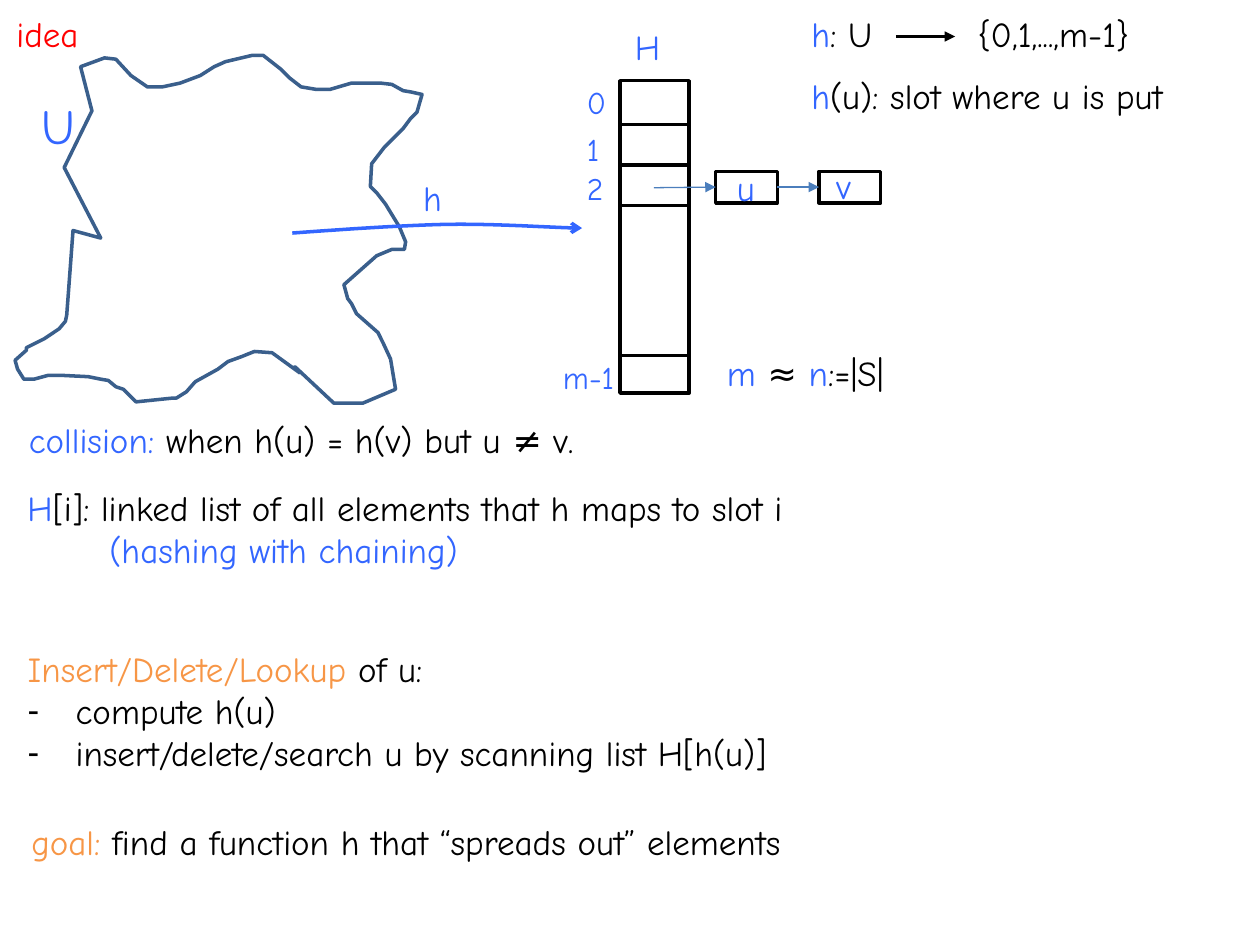
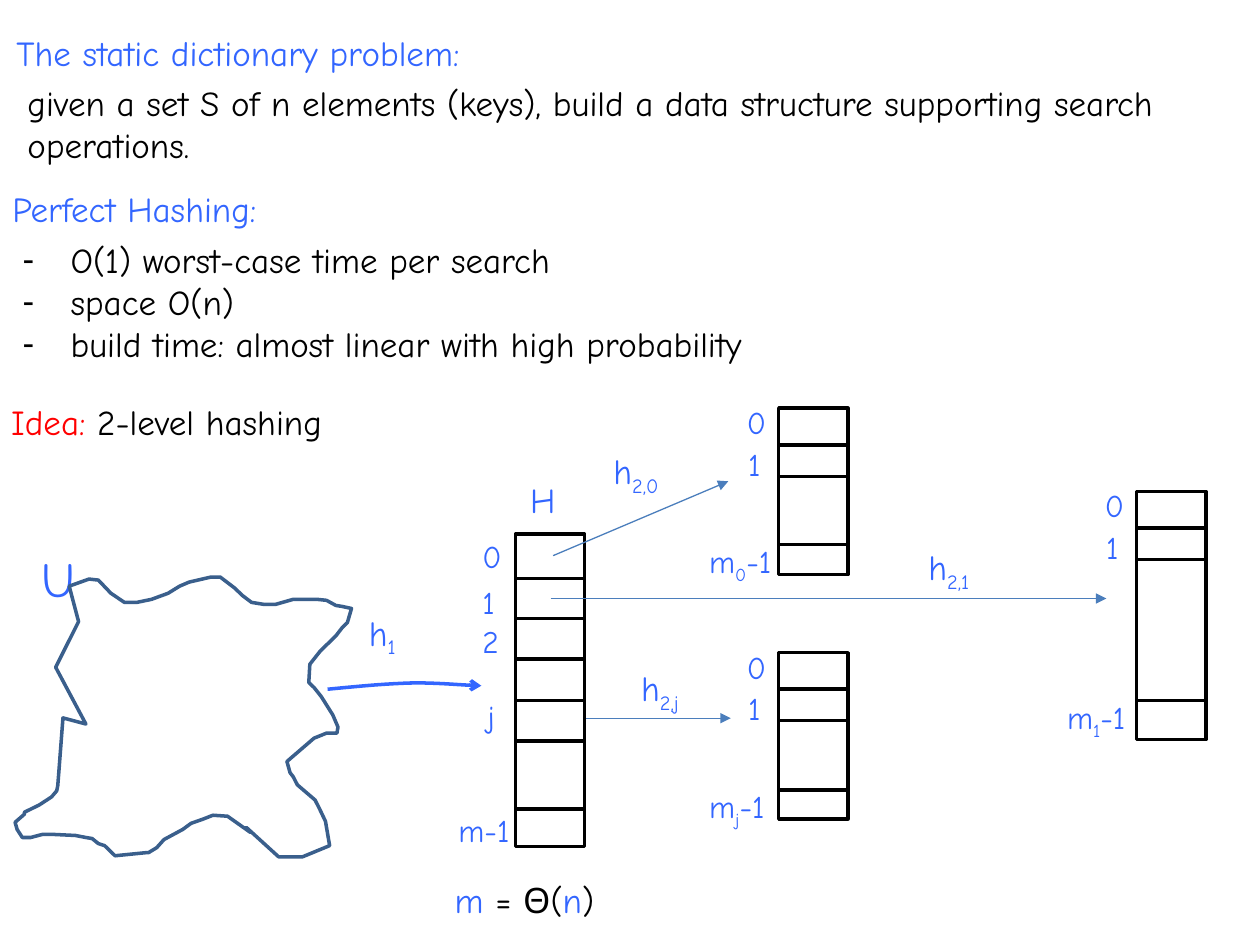
from lxml import etree
from pptx import Presentation
from pptx.dml.color import RGBColor
from pptx.enum.shapes import MSO_CONNECTOR, MSO_SHAPE
from pptx.enum.text import MSO_ANCHOR, MSO_AUTO_SIZE, PP_ALIGN
from pptx.oxml.ns import qn
from pptx.util import Inches, Pt

STRAIGHT = MSO_CONNECTOR.STRAIGHT
RECT = MSO_SHAPE.RECTANGLE
TOP, LEFT = MSO_ANCHOR.TOP, PP_ALIGN.LEFT
GROW = MSO_AUTO_SIZE.SHAPE_TO_FIT_TEXT
FONT = "Comic Neue"
COLORS = {"blue": "3366FF", "red": "FF0000", "orange": "F79646", "black": "000000",
          "outline": "3A5F8C", "pointer": "4B7EBC"}
CELL_W = 0.55

UNIVERSE = [
    (0.58, 1.83), (0.8, 1.89), (0.51, 1.33), (0.73, 0.88), (0.64, 0.53), (0.83, 0.46),
    (0.92, 0.47), (1.04, 0.6), (1.17, 0.69), (1.29, 0.69), (1.43, 0.66), (1.59, 0.6),
    (1.7, 0.53), (1.79, 0.49), (2, 0.44), (2.09, 0.44), (2.23, 0.55), (2.3, 0.62),
    (2.39, 0.69), (2.51, 0.71), (2.62, 0.71), (2.79, 0.66), (3.02, 0.66), (3.11, 0.67),
    (3.2, 0.72), (3.26, 0.73), (3.35, 0.75), (3.31, 0.89), (3.26, 0.94), (3.2, 1.02),
    (3.1, 1.12), (3.05, 1.17), (2.95, 1.3), (2.94, 1.48), (2.99, 1.53), (3.06, 1.62),
    (3.17, 1.8), (3.22, 1.92), (3.21, 1.98), (3.11, 1.98), (2.99, 2.03), (2.73, 2.26),
    (2.76, 2.37), (2.79, 2.41), (2.83, 2.49), (3, 2.64), (3.04, 2.72), (3.1, 2.85),
    (3.14, 3.09), (2.88, 3.2), (2.65, 3.2), (2.34, 2.91), (2.38, 2.96), (2.16, 2.8),
    (2.02, 2.79), (1.92, 2.83), (1.81, 2.87), (1.73, 2.93), (1.55, 3.03), (1.48, 3.11),
    (1.4, 3.16), (1.37, 3.16), (1.08, 3.19), (0.98, 3.09), (0.92, 3.07), (0.86, 3.02),
    (0.8, 3.01), (0.7, 2.99), (0.5, 2.98), (0.38, 2.98), (0.27, 3.01), (0.19, 3.01),
    (0.14, 2.93), (0.12, 2.86), (0.21, 2.78), (0.21, 2.76), (0.35, 2.69), (0.47, 2.61),
    (0.52, 2.55), (0.53, 2.5), (0.54, 2.37)]
ARROW_CURVES = [[(2.32, 1.85), (2.73, 1.82), (3.14, 1.79), (3.53, 1.78)],
                [(3.53, 1.78), (3.91, 1.77), (4.43, 1.81), (4.62, 1.81)]]


def bezier(curve, steps=10):
    for i in range(steps + 1):
        t = i / steps
        weights = ((1 - t) ** 3, 3 * t * (1 - t) ** 2, 3 * t * t * (1 - t), t ** 3)
        yield tuple(sum(w * c for w, c in zip(weights, axis)) for axis in zip(*curve))


HASH_ARROW = [pt for curve in ARROW_CURVES for pt in bezier(curve)]


def fit(points, x, y, w, h):
    xs, ys = zip(*points)
    kx, ky = w / (max(xs) - min(xs)), h / (max(ys) - min(ys))
    return [(Inches(x + (px - min(xs)) * kx), Inches(y + (py - min(ys)) * ky))
            for px, py in points]


class Sketch:
    def __init__(self, prs):
        self.prs = prs

    def new_slide(self):
        self.s = self.prs.slides.add_slide(self.prs.slide_layouts[1])

    def set_text(self, sp, x, y, w, paras, size, lines):
        sp.left, sp.top, sp.width = Inches(x), Inches(y), Inches(w)
        sp.height = Inches(0.1 + 0.0168 * size * lines)
        tf = sp.text_frame
        tf.word_wrap, tf.auto_size, tf.vertical_anchor = True, GROW, TOP
        for i, segments in enumerate(paras):
            p = tf.add_paragraph() if i else tf.paragraphs[0]
            p.alignment, p.space_before = LEFT, Pt(0)
            for text, color, *sub in segments:
                r = p.add_run()
                r.text = text
                r.font.name, r.font.size = FONT, Pt(size)
                r.font.color.rgb = RGBColor.from_string(COLORS[color])
                if sub:
                    r.font._element.set("baseline", "-25000")
        return tf.paragraphs

    def text(self, x, y, w, *paras, size=20, lines=1):
        sp = self.s.shapes.add_textbox(0, 0, 0, 0)
        return self.set_text(sp, x, y, w, paras, size, max(lines, len(paras)))

    def label(self, x, y, w, text, sub="", rest="", size=20):
        parts = [(text, "blue"), (sub, "blue", True), (rest, "blue")]
        self.text(x, y, w, [part for part in parts if part[0]], size=size)

    def title(self, x, y, w, text, color):
        self.set_text(self.s.shapes.title, x, y, w, [[(text, color)]], 20, 1)

    def body(self, x, y, w, items, heading=None):
        paras = ([heading] if heading else []) + [[(item, "black")] for item in items]
        listed = self.set_text(self.s.placeholders[1], x, y, w, paras, 20, len(paras))
        for i, p in enumerate(listed):
            if heading and i == 0:
                self.indent(p, 0, 0)
                etree.SubElement(p._p.get_or_add_pPr(), qn("a:buNone"))
            else:
                self.indent(p, 0.38, -0.38)
                etree.SubElement(p._p.get_or_add_pPr(), qn("a:buChar"), char="-")

    def indent(self, p, left, first=0):
        pPr = p._p.get_or_add_pPr()
        pPr.set("marL", str(Inches(left)))
        pPr.set("indent", str(Inches(first)))

    def tab(self, p, pos):
        tabs = etree.SubElement(p._p.get_or_add_pPr(), qn("a:tabLst"))
        etree.SubElement(tabs, qn("a:tab"), pos=str(Inches(pos)), algn="l")

    def stroke(self, sp, color, width, head=None):
        sp.line.color.rgb = RGBColor.from_string(COLORS[color])
        sp.line.width = Pt(width)
        if head:
            etree.SubElement(sp.line._get_or_add_ln(), qn("a:tailEnd"), type=head)

    def rect(self, x, y, w, h):
        sp = self.s.shapes.add_shape(RECT, Inches(x), Inches(y), Inches(w), Inches(h))
        sp.shadow.inherit = False
        sp.fill.background()
        self.stroke(sp, "black", 2)
        return sp

    def line(self, x1, y1, x2, y2, color="black", width=2, head=None):
        c = self.s.shapes.add_connector(STRAIGHT, Inches(x1), Inches(y1), Inches(x2), Inches(y2))
        self.stroke(c, color, width, head)
        etree.SubElement(c._element.spPr, qn("a:effectLst"))
        return c

    def pointer(self, x1, y1, x2, y2):
        return self.line(x1, y1, x2, y2, "pointer", 0.75, "triangle")

    def freeform(self, points, box, color, closed=False, head=None):
        start, *others = fit(points, *box)
        builder = self.s.shapes.build_freeform(*start)
        builder.add_line_segments(others, close=closed)
        sp = builder.convert_to_shape()
        sp.shadow.inherit = False
        sp.fill.background()
        self.stroke(sp, color, 2, head)

    def array(self, x, y, h, dividers):
        self.rect(x, y, CELL_W, h)
        for d in dividers:
            self.line(x, y + d, x + CELL_W, y + d)

    def hash_table(self, x, y, extra=()):
        self.array(x, y, 2.48, [0.35, 0.67, 0.99, 2.18, *extra])
        self.label(x + 0.02, y - 0.49, 0.47, "H")
        for i, dy in enumerate((-0.03, 0.34, 0.65)):
            self.label(x - 0.36, y + dy, 0.33, str(i), size=18)
        self.label(x - 0.55, y + 2.15, 0.63, "m-1", size=18)

    def second_table(self, x, y, h, last, index):
        self.array(x, y, h, [0.29, 0.54, last])
        self.label(x - 0.35, y - 0.09, 0.33, "0", size=18)
        self.label(x - 0.34, y + 0.24, 0.33, "1", size=18)
        self.label(x - 0.65, y + last - 0.07, 0.79, "m", index, "-1", size=18)

    def universe(self, outline, arrow, u_y):
        self.label(0.23, u_y, 0.47, "U", size=28)
        self.freeform(UNIVERSE, outline, "outline", closed=True)
        self.freeform(HASH_ARROW, arrow, "blue", head="arrow")


def chaining_slide(d):
    d.new_slide()
    d.title(0.03, 0.05, 3.79, "idea", "red")
    d.body(0.12, 5.09, 9.93,
           ["compute h(u)", "insert/delete/search u by scanning list H[h(u)]"],
           heading=[("Insert/Delete/Lookup ", "orange"), ("of u:", "black")])
    d.text(0.15, 6.46, 7.53, [("goal: ", "orange"),
                              ("find a function h that “spreads out” elements", "black")])
    d.universe((0.12, 0.44, 3.23, 2.76), (2.32, 1.78, 2.3, 0.07), 0.71)
    d.label(3.26, 1.35, 0.47, "h")
    d.text(0.13, 3.27, 4.85, [("collision: ", "blue"),
                              ("when h(u) = h(v) but u ≠ v.", "black")])
    d.hash_table(4.92, 0.64)

    mapping = d.text(6.34, 0.05, 3.11, [("h", "blue"), (": U\t{0,1,...,m-1}", "black")])
    d.tab(mapping[0], 1.32)
    d.line(7.11, 0.29, 7.58, 0.29, width=1.5, head="triangle")
    d.text(6.34, 0.54, 3.39, [("h", "blue"), ("(u): slot where u is put", "black")])

    u, v = (d.rect(x, 1.36, 0.49, 0.25) for x in (5.68, 6.5))
    link = d.pointer(6.17, 1.49, 6.5, 1.49)
    link.begin_connect(u, 3)
    link.end_connect(v, 1)
    d.pointer(5.19, 1.49, 5.68, 1.49).end_connect(u, 1)
    d.label(5.75, 1.27, 0.33, "u")
    d.label(6.54, 1.26, 0.33, "v")

    chain = d.text(0.12, 3.81, 7.33,
                   [("H", "blue"),
                    ("[i]: linked list of all elements that h maps to slot i", "black")],
                   [("(hashing with chaining)", "blue")])
    d.indent(chain[1], 0.65)
    d.text(5.67, 2.74, 1.65, [("m ", "blue"), ("≈ ", "black"), ("n", "blue"),
                              (":=|S|", "black")])


def perfect_hashing_slide(d):
    d.new_slide()
    d.title(0.03, 0.2, 9.18, "The static dictionary problem:", "blue")
    d.text(0.12, 0.6, 9.53,
           [("given a set S of n elements (keys), build a data structure "
             "supporting search operations.", "black")], lines=2)
    d.label(0, 1.44, 9.18, "Perfect Hashing:")
    d.body(0.08, 1.84, 9.53, ["O(1) worst-case time per search", "space O(n)",
                              "build time: almost linear with high probability"])
    d.text(-0.01, 3.13, 3.31, [("Idea: ", "red"), ("2-level hashing", "black")])

    d.universe((0.12, 4.58, 2.67, 2.22), (2.6, 5.42, 1.22, 0.05), 4.3)
    d.label(2.83, 4.8, 0.47, "h", "1")
    d.hash_table(4.09, 4.24, extra=(1.32, 1.64))
    d.label(3.77, 5.48, 0.33, "j", size=18)
    d.text(3.51, 6.92, 1.34, [("m ", "blue"), ("= Θ(", "black"), ("n", "blue"),
                              (")", "black")])

    second_level = [
        ("j", (6.18, 5.18, 1.32, 1.09), (4.65, 5.7, 5.8, 5.7), (4.99, 5.24)),
        ("0", (6.18, 3.24, 1.32, 1.08), (4.39, 4.41, 5.78, 3.82), (4.77, 3.52)),
        ("1", (9.02, 3.9, 1.97, 1.66), (4.37, 4.75, 8.78, 4.75), (7.27, 4.28))]
    for index, table, arrow, label in second_level:
        d.second_table(*table, index)
        d.pointer(*arrow)
        d.label(*label, 0.79, "h", "2," + index)


def main():
    prs = Presentation()
    prs.slide_width, prs.slide_height = Inches(10), Inches(7.5)
    d = Sketch(prs)
    chaining_slide(d)
    perfect_hashing_slide(d)
    prs.save("out.pptx")


if __name__ == "__main__":
    main()
